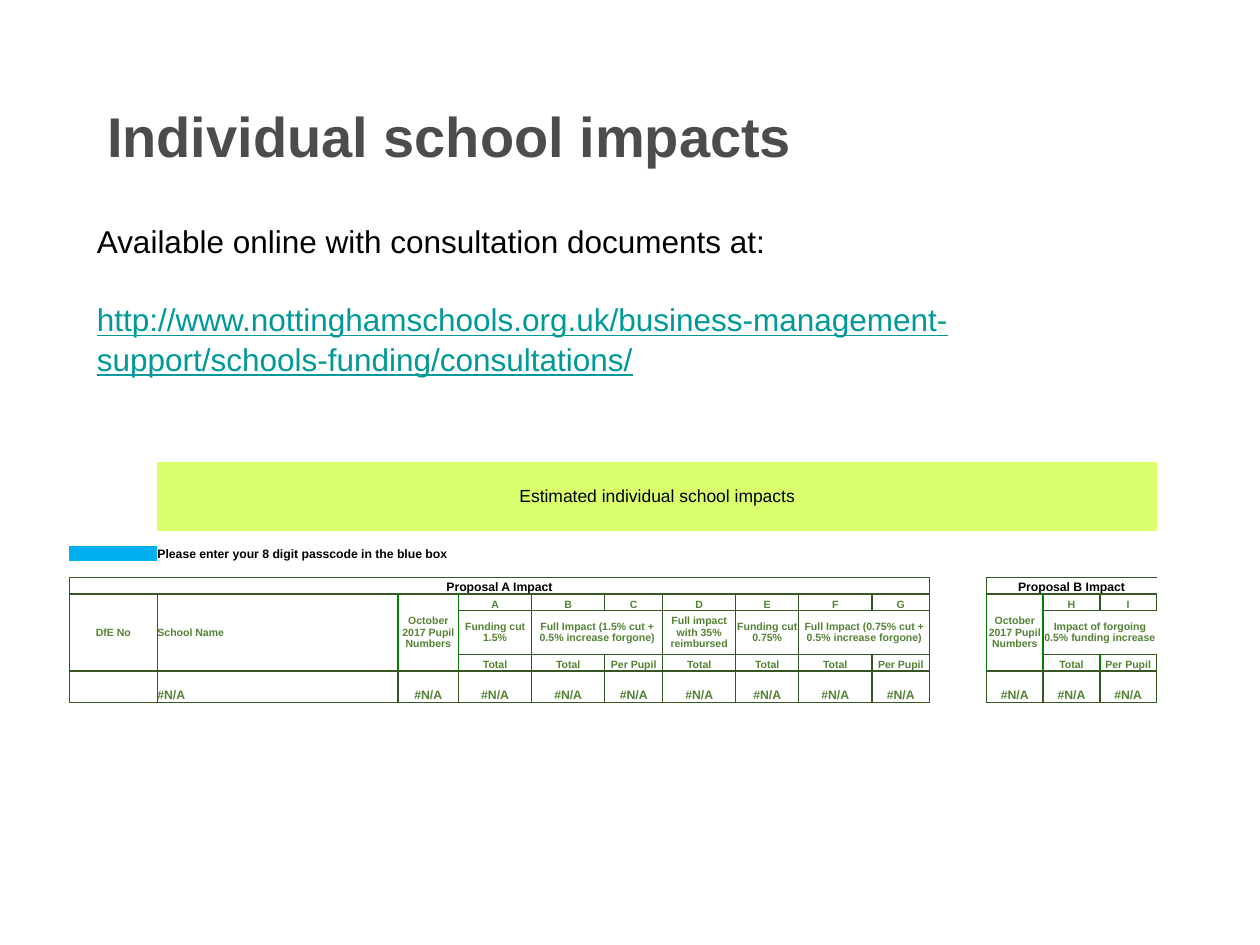
from lxml.etree import SubElement
from pptx import Presentation
from pptx.dml.color import RGBColor as Rgb
from pptx.enum.text import MSO_ANCHOR as Anchor, PP_ALIGN as Align
from pptx.oxml import parse_xml
from pptx.oxml.ns import nsdecls, qn
from pptx.util import Inches, Pt

HUES = {
    "title": "4C4C4C", "black": "000000", "link": "009999", "lime": "D9FF6D",
    "blue": "00B0F0", "dark": "375623", "green": "008000", "label": "548235",
}
FONT = "Arial"
COLS = [0.27, 0.7, 1.91, 0.48, 0.58, 0.58, 0.46, 0.58, 0.5, 0.58, 0.46] + [0.45] * 4
ROWS = [0.13, 0.13, 0.13, 0.13, 0.12, 0.12, 0.13, 0.13, 0.13, 0.35, 0.13, 0.12, 0.13, 0.12]
BARE = "{2D5ABB26-0587-4C30-8999-92F81FD0307C}"
GAP = 11
PUPILS = "October 2017 Pupil Numbers"
HEADS = [(1, "DfE No"), (2, "School Name"), (3, PUPILS), (12, PUPILS)]
IMPACTS = [
    (4, "A", "Funding cut 1.5%"),
    (5, "BC", "Full Impact (1.5% cut + 0.5% increase forgone)"),
    (7, "D", "Full impact with 35% reimbursed"),
    (8, "E", "Funding cut 0.75%"),
    (9, "FG", "Full Impact (0.75% cut + 0.5% increase forgone)"),
    (13, "HI", "Impact of forgoing 0.5% funding increase"),
]


def style(para, size, hue, bold=False, line=False):
    for run in para.runs:
        font = run.font
        font.name, font.size, font.bold = FONT, Pt(size), bold
        font.color.rgb = Rgb.from_string(HUES[hue])
        if line:
            font.underline = True


def add_title(slide):
    title = slide.shapes.title
    title.left, title.top = Inches(0.75), Inches(0.67)
    title.width, title.height = Inches(8.92), Inches(0.8)
    frame = title.text_frame
    frame.text = "Individual school impacts"
    frame.vertical_anchor = Anchor.MIDDLE
    para = frame.paragraphs[0]
    para.alignment = Align.LEFT
    style(para, 32, "title", True)


def add_body(slide):
    box = slide.shapes.add_textbox(Inches(0.67), Inches(1.7), Inches(7.95), Inches(1.62))
    frame = box.text_frame
    frame.word_wrap = True
    intro = frame.paragraphs[0]
    intro.text = "Available online with consultation documents at:"
    style(intro, 18, "black")
    link = frame.add_paragraph()
    link.text = ("http://www.nottinghamschools.org.uk/business-management-support/"
                 "schools-funding/consultations/")
    link.space_before = Pt(22)
    style(link, 18, "link", line=True)
    for para in frame.paragraphs:
        para.line_spacing = 1.05


def add_grid(slide):
    shape = slide.shapes.add_table(len(ROWS), len(COLS), Inches(0.28), Inches(3.67),
                                   Inches(sum(COLS)), Inches(sum(ROWS)))
    grid = shape.table
    grid.first_row = grid.horz_banding = False
    grid._tbl.tblPr.find(qn("a:tableStyleId")).text = BARE
    for col, width in zip(grid.columns, COLS):
        col.width = Inches(width)
    for row, height in zip(grid.rows, ROWS):
        row.height = Inches(height)
    for cell in grid.iter_cells():
        cell.margin_left = cell.margin_right = 0
        cell.margin_top = cell.margin_bottom = 0
        cell.fill.background()
        SubElement(cell.text_frame.paragraphs[0]._p, qn("a:endParaRPr"), sz="600")
    return grid


def paint(cell, hue):
    cell.fill.solid()
    cell.fill.fore_color.rgb = Rgb.from_string(HUES[hue])


def write(cell, text, size, hue, bold=True, left=False, low=True):
    para = cell.text_frame.paragraphs[0]
    para.text = text
    para.alignment = Align.LEFT if left else Align.CENTER
    cell.vertical_anchor = Anchor.BOTTOM if low else Anchor.MIDDLE
    style(para, size, hue, bold)


def edge_hue(row, side):
    green = row in (8, 9, 10) and side in (2, 3, 4, 12, 13)
    return "green" if green or (row, side) == (10, 14) else "dark"


def rule(cell, edges):
    props = cell._tc.get_or_add_tcPr()
    for spot, (side, hue) in enumerate(edges):
        props.insert(spot, parse_xml(
            f'<a:ln{side} {nsdecls("a")} w="12700"><a:solidFill>'
            f'<a:srgbClr val="{HUES[hue]}"/></a:solidFill></a:ln{side}>'))


def add_box(grid, row, col, text, high=1, wide=1, size=6, hue="label", **look):
    last, end = row + high - 1, col + wide - 1
    for r in range(row, last + 1):
        for c in range(col, end + 1):
            sides = [("L", c == col, edge_hue(r, c)), ("R", c == end, edge_hue(r, c + 1)),
                     ("T", r == row, "dark"), ("B", r == last, "dark")]
            rule(grid.cell(r, c), [(side, tint) for side, on, tint in sides if on])
    cell = grid.cell(row, col)
    if high * wide > 1:
        cell.merge(grid.cell(last, end))
    if text:
        write(cell, text, size, hue, **look)


def add_banner(grid):
    banner = grid.cell(0, 2)
    banner.merge(grid.cell(3, 14))
    paint(banner, "lime")
    write(banner, "Estimated individual school impacts", 10, "black", bold=False, low=False)
    paint(grid.cell(5, 1), "blue")
    hint = grid.cell(5, 2)
    hint.merge(grid.cell(5, 3))
    write(hint, "Please enter your 8 digit passcode in the blue box", 7, "black", left=True)


def add_impacts(grid):
    add_box(grid, 7, 1, "Proposal A Impact", wide=10, size=7, hue="black")
    add_box(grid, 7, 12, "Proposal B Impact", wide=3, size=7, hue="black")
    for col, text in HEADS:
        add_box(grid, 8, col, text, high=3, left=col == 2, low=False)
    for col, marks, text in IMPACTS:
        add_box(grid, 9, col, text, wide=len(marks), low=False)
        for step, mark in enumerate(marks):
            add_box(grid, 8, col + step, mark)
            add_box(grid, 10, col + step, "Per Pupil" if step else "Total")
    for col in range(1, len(COLS)):
        if col != GAP:
            add_box(grid, 11, col, "#N/A" if col > 1 else "", high=2, size=7, left=col == 2)


def main():
    deck = Presentation()
    deck.slide_width, deck.slide_height = Inches(10), Inches(7.5)
    slide = deck.slides.add_slide(deck.slide_layouts[5])
    add_title(slide)
    grid = add_grid(slide)
    add_banner(grid)
    add_impacts(grid)
    add_body(slide)
    deck.save("out.pptx")


if __name__ == "__main__":
    main()
